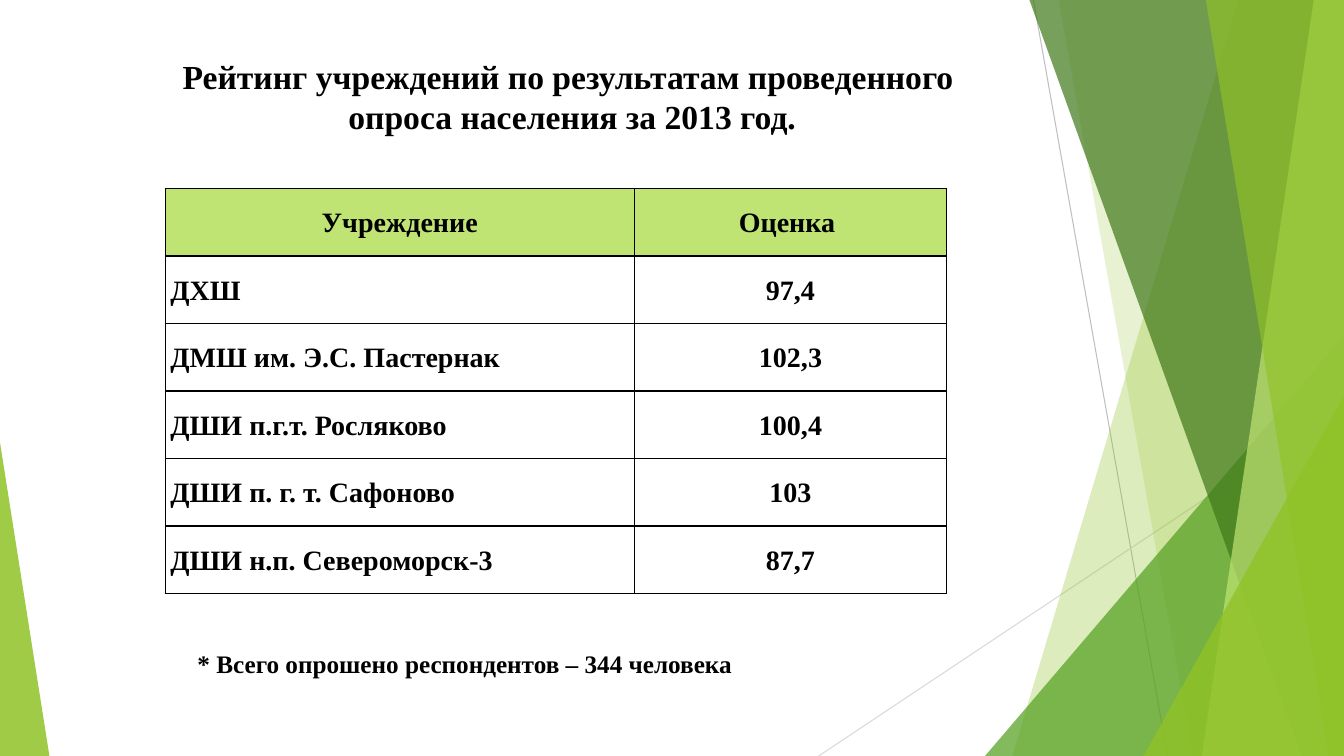
from dataclasses import dataclass

from lxml import etree
from pptx import Presentation
from pptx.dml.color import RGBColor
from pptx.enum.shapes import MSO_CONNECTOR, MSO_SHAPE
from pptx.enum.text import MSO_ANCHOR, MSO_AUTO_SIZE, PP_ALIGN
from pptx.oxml.ns import qn
from pptx.util import Inches, Pt

WIDTH, HEIGHT = 13.33, 7.5


@dataclass(frozen=True)
class Theme:
    font: str = "Times New Roman"
    text: str = "000000"
    paper: str = "FFFFFF"
    lime: str = "90C226"
    pale_lime: str = "C0E474"
    green: str = "54A021"
    dark_green: str = "3F7819"
    line: str = "BFBFBF"
    pale_line: str = "D9D9D9"
    title_size: int = 24
    table_size: int = 20
    note_size: int = 18


class SlideBuilder:
    def __init__(self, slide, theme):
        self.slide = slide
        self.theme = theme

    def fill(self, shape, color, opacity):
        shape.shadow.inherit = False
        shape.line.fill.background()
        shape.fill.solid()
        shape.fill.fore_color.rgb = RGBColor.from_string(color)
        color_node = shape._element.spPr.find(qn("a:solidFill"))[0]
        etree.SubElement(color_node, qn("a:alpha"), val=str(opacity * 1000))

    def line(self, start, end, color):
        points = [Inches(value) for value in (*start, *end)]
        connector = self.slide.shapes.add_connector(MSO_CONNECTOR.STRAIGHT, *points)
        connector.line.color.rgb = RGBColor.from_string(color)
        connector.line.width = Pt(0.75)
        etree.SubElement(connector._element.spPr, qn("a:effectLst"))

    def band(self, top_x, bottom_x, color, opacity):
        """Fill from a slanted left edge to the right edge of the slide."""
        corners = [(WIDTH, 0), (WIDTH, HEIGHT), (bottom_x, HEIGHT)]
        builder = self.slide.shapes.build_freeform(Inches(top_x), 0)
        builder.add_line_segments([(Inches(x), Inches(y)) for x, y in corners])
        self.fill(builder.convert_to_shape(), color, opacity)

    def triangle(self, left, top, width, apex, color, opacity):
        """Stand a right-angled triangle on the bottom of the slide."""
        shape = self.slide.shapes.add_shape(
            MSO_SHAPE.ISOSCELES_TRIANGLE,
            Inches(left), Inches(top), Inches(width), Inches(HEIGHT - top))
        shape.adjustments[0] = apex
        self.fill(shape, color, opacity)

    def add_lines(self, frame, lines, size, align, spacing=1.0):
        frame.word_wrap = True
        for index, line in enumerate(lines):
            paragraph = frame.add_paragraph() if index else frame.paragraphs[0]
            paragraph.alignment = align
            paragraph.line_spacing = spacing
            paragraph.space_before = Pt(0)
            run = paragraph.add_run()
            run.text = line
            run.font.name = self.theme.font
            run.font.size = Pt(size)
            run.font.bold = True
            run.font.color.rgb = RGBColor.from_string(self.theme.text)

    def title(self, lines, left, top, width, height):
        title = self.slide.shapes.title
        title.left, title.top = Inches(left), Inches(top)
        title.width, title.height = Inches(width), Inches(height)
        title.text_frame.auto_size = MSO_AUTO_SIZE.NONE
        title.text_frame.vertical_anchor = MSO_ANCHOR.TOP
        self.add_lines(title.text_frame, lines, self.theme.title_size, PP_ALIGN.CENTER)

    def note(self, text, left, top, width, height):
        box = self.slide.shapes.add_textbox(
            Inches(left), Inches(top), Inches(width), Inches(height))
        self.add_lines(box.text_frame, [text], self.theme.note_size, PP_ALIGN.LEFT)

    def border(self, cell):
        properties = cell._tc.get_or_add_tcPr()
        for index, side in enumerate(("lnL", "lnR", "lnT", "lnB")):
            edge = etree.Element(qn(f"a:{side}"), w=str(Pt(1)))
            solid = etree.SubElement(edge, qn("a:solidFill"))
            etree.SubElement(solid, qn("a:srgbClr"), val=self.theme.text)
            properties.insert(index, edge)

    def table(self, rows, left, top, column_widths, row_height):
        table = self.slide.shapes.add_table(
            len(rows), len(column_widths), Inches(left), Inches(top),
            Inches(sum(column_widths)), Inches(row_height * len(rows))).table
        for column, width in zip(table.columns, column_widths):
            column.width = Inches(width)
        for row_index, row in enumerate(rows):
            is_header = row_index == 0
            for column_index, text in enumerate(row):
                cell = table.cell(row_index, column_index)
                cell.margin_left = cell.margin_right = Inches(0.05)
                cell.margin_top = cell.margin_bottom = 0
                cell.vertical_anchor = MSO_ANCHOR.MIDDLE
                cell.fill.solid()
                cell.fill.fore_color.rgb = RGBColor.from_string(
                    self.theme.pale_lime if is_header else self.theme.paper)
                centered = is_header or column_index == 1
                align = PP_ALIGN.CENTER if centered else PP_ALIGN.JUSTIFY
                self.add_lines(cell.text_frame, [text], self.theme.table_size, align, 1.07)
                self.border(cell)


def main():
    theme = Theme()
    presentation = Presentation()
    presentation.slide_width = Inches(WIDTH)
    presentation.slide_height = Inches(HEIGHT)
    slide = presentation.slides.add_slide(presentation.slide_layouts[5])
    builder = SlideBuilder(slide, theme)

    # Decorative lines, bands and corners, from back to front
    builder.line((10.25, 0), (11.58, HEIGHT), theme.line)
    builder.line((WIDTH, 4.03), (8.12, HEIGHT), theme.pale_line)
    builder.band(12.28, 10.04, theme.lime, 30)
    builder.band(10.5, 11.83, theme.lime, 20)
    builder.triangle(9.77, 3.33, 3.56, 1, theme.green, 72)
    builder.band(10.21, 12.91, theme.dark_green, 70)
    builder.band(13.03, 11.92, theme.pale_lime, 70)
    builder.band(11.96, 13.18, theme.lime, 65)
    builder.triangle(11.34, 3.93, 1.99, 1, theme.lime, 80)
    builder.triangle(0, 4.39, 0.49, 0, theme.lime, 85)

    # Rating table
    ratings = [
        ("Учреждение", "Оценка "),
        ("ДХШ ", "97,4"),
        ("ДМШ им. Э.С. Пастернак", "102,3"),
        ("ДШИ п.г.т. Росляково", "100,4"),
        ("ДШИ п. г. т. Сафоново", "103"),
        ("ДШИ н.п. Североморск-3", "87,7"),
    ]
    builder.table(ratings, 1.64, 1.87, (4.65, 3.1), 0.67)

    # Title and footnote
    builder.title(
        ["Рейтинг учреждений по результатам проведенного ",
         "опроса населения за 2013 год."], 1.21, 0.5, 8.93, 0.91)
    builder.note("* Всего опрошено респондентов – 344 человека",
                 1.86, 6.38, 7.18, 0.71)

    presentation.save("out.pptx")


if __name__ == "__main__":
    main()
